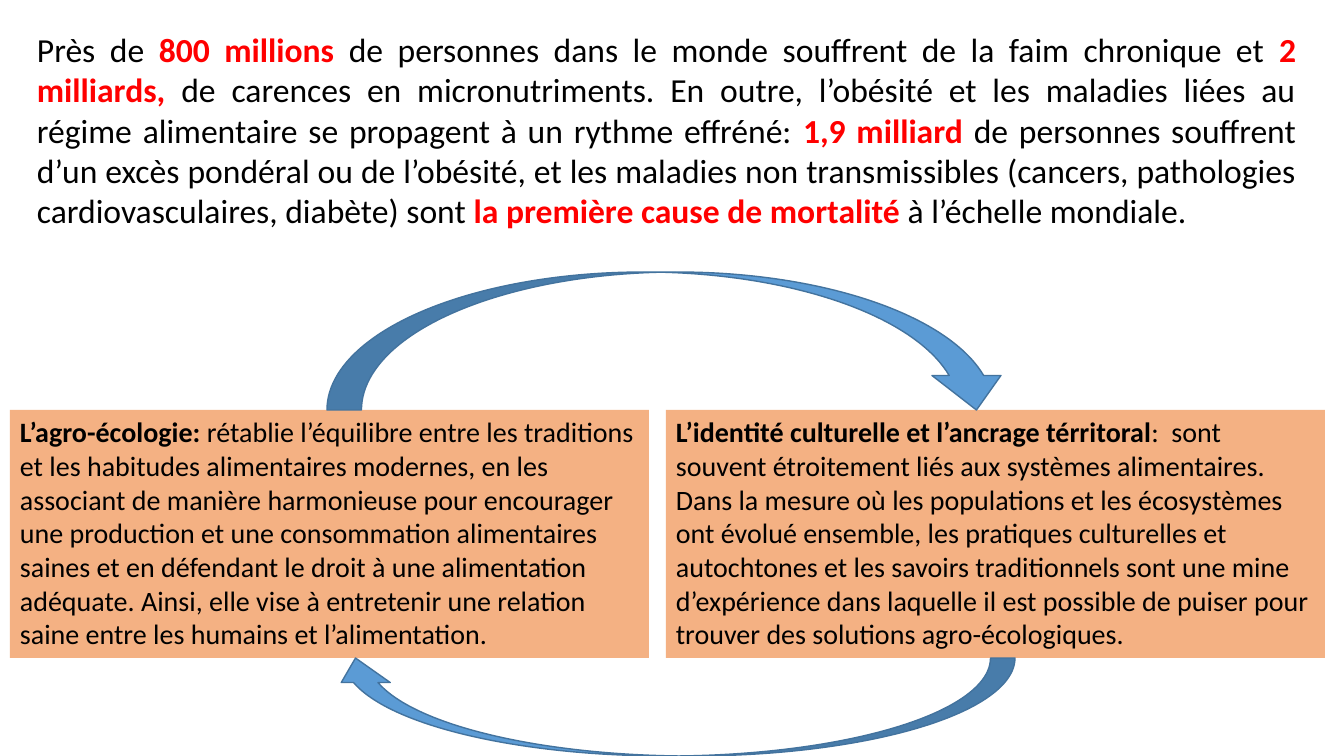
"""Build a slide on hunger, agroecology and cultural identity as a cycle."""
import pptx
import pptx.dml.color
import pptx.enum.shapes
import pptx.enum.text
import pptx.util

PX = 914400 / 100.8
COLOURS = {"text": "000000", "key": "FF0000", "panel": "F4B183",
           "arrow": "5B9BD5", "edge": "43739E"}
ALIGN = pptx.enum.text.PP_ALIGN
SHAPES = pptx.enum.shapes.MSO_SHAPE

INTRO = [
    ("Près de ", False),
    ("800 millions ", True),
    ("de personnes dans le monde souffrent de la faim chronique et ", False),
    ("2 milliards, ", True),
    ("de carences en micronutriments. En outre, l’obésité et les maladies liées "
     "au régime alimentaire se propagent à un rythme effréné: ", False),
    ("1,9 milliard", True),
    (" de personnes souffrent d’un excès pondéral ou de l’obésité, et les maladies "
     "non transmissibles (cancers, pathologies cardiovasculaires, diabète) sont ", False),
    ("la première cause de mortalité ", True),
    ("à l’échelle mondiale.", False),
]
AGROECOLOGY = [
    ("L’agro-écologie: ", True),
    ("rétablie l’équilibre entre les traditions et les habitudes alimentaires "
     "modernes, en les associant de manière harmonieuse pour encourager une "
     "production et une consommation alimentaires saines et en défendant le droit "
     "à une alimentation adéquate. Ainsi, elle vise à entretenir une relation "
     "saine entre les humains et l’alimentation.", False),
]
IDENTITY = [
    ("L’identité culturelle et l’ancrage térritoral", True),
    (":  sont souvent étroitement liés aux systèmes alimentaires. Dans la mesure où "
     "les populations et les écosystèmes ont évolué ensemble, les pratiques "
     "culturelles et autochtones et les savoirs traditionnels sont une mine "
     "d’expérience dans laquelle il est possible de puiser pour trouver des "
     "solutions agro-écologiques.", False),
]


def px(*lengths):
    return [pptx.util.Emu(round(length * PX)) for length in lengths]


def colour(name):
    return pptx.dml.color.RGBColor.from_string(COLOURS[name])


def fill_shape(shape, name):
    shape.fill.solid()
    shape.fill.fore_color.rgb = colour(name)


def add_text(page, place, spans, size, key="text", align=ALIGN.LEFT, panel=None):
    box = page.shapes.add_textbox(*px(*place))
    if panel:
        fill_shape(box, panel)
    box.text_frame.word_wrap = True
    para = box.text_frame.paragraphs[0]
    para.alignment = align
    for text, strong in spans:
        span = para.add_run()
        span.text = text
        span.font.color.rgb = colour(key if strong else "text")
        look = {"name": "Calibri", "size": pptx.util.Pt(size), "bold": strong}
        for attribute, value in look.items():
            setattr(span.font, attribute, value)


def add_cycle_arrow(page, place, rotation=0):
    arrow = page.shapes.add_shape(SHAPES.CURVED_DOWN_ARROW, *px(*place))
    arrow.rotation = rotation
    arrow.shadow.inherit = False
    fill_shape(arrow, "arrow")
    arrow.line.color.rgb = colour("edge")
    arrow.line.width = pptx.util.Pt(1)


def main():
    deck = pptx.Presentation()
    deck.slide_width, deck.slide_height = px(1344, 756)
    page = deck.slides.add_slide(deck.slide_layouts[6])
    add_text(page, (27, 24, 1279, 214), INTRO, 24, key="key", align=ALIGN.JUSTIFY)
    add_text(page, (10, 410, 639, 248), AGROECOLOGY, 20, panel="panel")
    add_text(page, (666, 410, 659, 248), IDENTITY, 20, panel="panel")
    add_cycle_arrow(page, (327, 272, 684, 138))
    add_cycle_arrow(page, (331, 658, 684, 98), rotation=180)
    deck.save("out.pptx")


if __name__ == "__main__":
    main()
